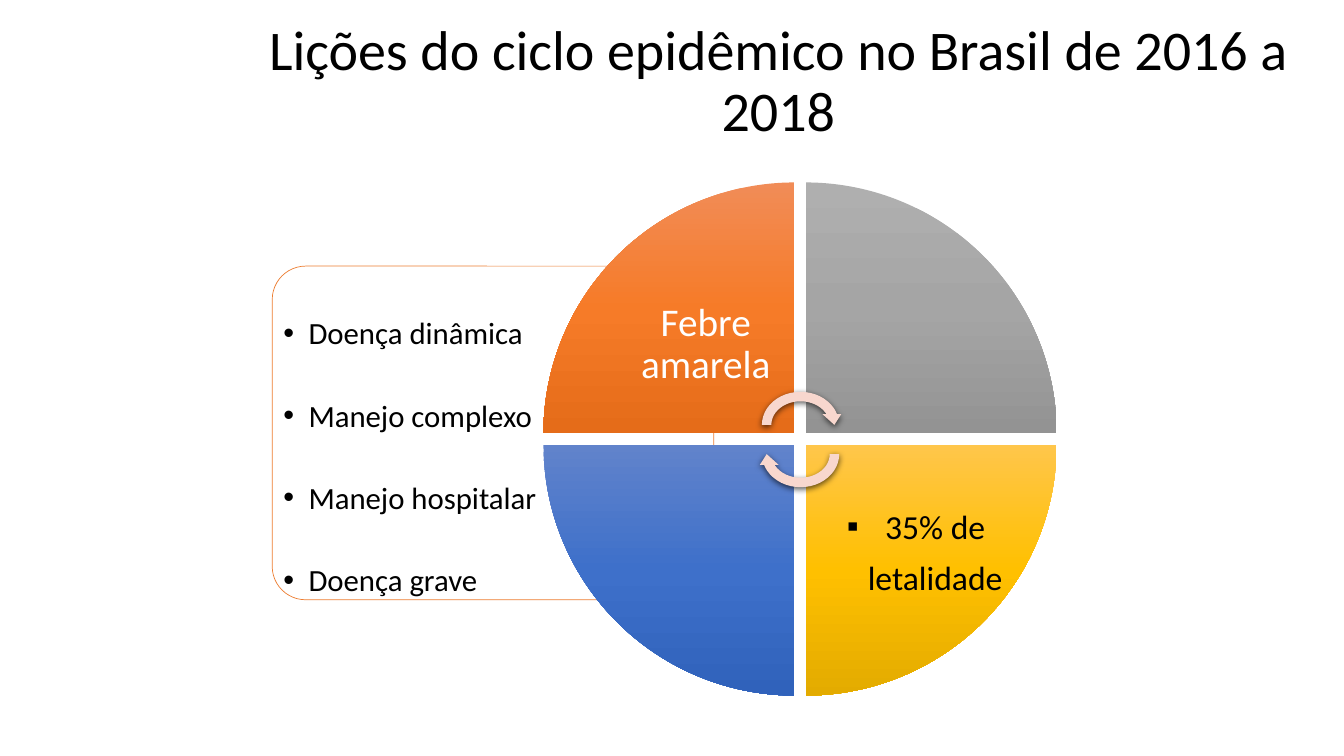
import pptx
import pptx.util
import pptx.dml.color
import pptx.enum.shapes
import pptx.enum.text
import pptx.oxml
from lxml import etree

Inches = pptx.util.Inches
Pt = pptx.util.Pt
SHAPE = pptx.enum.shapes.MSO_SHAPE
ALIGN = pptx.enum.text.PP_ALIGN
ANCHOR = pptx.enum.text.MSO_ANCHOR
A = "http://schemas.openxmlformats.org/drawingml/2006/main"
NS = f'xmlns:a="{A}"'


def color(value):
    return pptx.dml.color.RGBColor.from_string(value)


def write(shape, lines, size, ink="000000", align=ALIGN.CENTER, anchor=ANCHOR.MIDDLE,
          inset=None, spacing=0.9, after=0, bullet=None, hang=0):
    frame = shape.text_frame
    frame.word_wrap = True
    frame.auto_size = pptx.enum.text.MSO_AUTO_SIZE.NONE
    frame.vertical_anchor = anchor
    if inset is not None:
        frame.margin_left = frame.margin_right = Inches(inset)
        frame.margin_top = frame.margin_bottom = Inches(inset)
    frame.text = "\n".join(lines)
    for paragraph in frame.paragraphs:
        if bullet:
            properties = paragraph._p.get_or_add_pPr()
            properties.set("marL", str(Inches(hang)))
            properties.set("indent", str(-Inches(hang)))
            etree.SubElement(properties, f"{{{A}}}buFont", typeface="Arial")
            etree.SubElement(properties, f"{{{A}}}buChar", char=bullet)
        paragraph.alignment = align
        paragraph.line_spacing = spacing
        paragraph.space_before = Pt(0)
        paragraph.space_after = Pt(after)
        for run in paragraph.runs:
            run.font.name = "Calibri"
            run.font.size = Pt(size)
            run.font.color.rgb = color(ink)


deck = pptx.Presentation()
deck.slide_width = Inches(13.33)
deck.slide_height = Inches(7.5)
slide = deck.slides.add_slide(deck.slide_layouts[0])
shapes = slide.shapes

lessons_frame = shapes.add_shape(SHAPE.ROUNDED_RECTANGLE, Inches(2.7), Inches(2.64),
                                 Inches(4.38), Inches(3.31))
lessons_frame.adjustments[0] = 0.1
lessons_frame.shadow.inherit = False
lessons_frame.fill.solid()
lessons_frame.fill.fore_color.rgb = color("FFFFFF")
white = lessons_frame.fill._xPr.find(f".//{{{A}}}srgbClr")
etree.SubElement(white, f"{{{A}}}alpha", val="90000")
lessons_frame.line.color.rgb = color("ED7D31")
lessons_frame.line.width = Pt(0.5)

lessons = shapes.add_textbox(Inches(2.77), Inches(2.71), Inches(2.92), Inches(2.33))
write(lessons, ["Doença dinâmica", "Manejo complexo", "Manejo hospitalar", "Doença grave"], 22,
      align=ALIGN.LEFT, anchor=ANCHOR.TOP, inset=0.04, spacing=2, after=6, bullet="•", hang=0.25)

wedge_left, wedge_top, wedge_size = 5.39, 1.81, 2.49
wedge_step = 2.6
wedges = [
    (0, 0, ("F18C57", "F67B28", "E56C19")),
    (1, 0, ("AFAFAF", "A5A5A5", "939393")),
    (1, 1, ("FFC64B", "FFC000", "E3AB00")),
    (0, 1, ("6183CB", "3E70CA", "3062BB")),
]
for turn, (column, row, shades) in enumerate(wedges):
    wedge = shapes.add_shape(SHAPE.PIE_WEDGE, Inches(wedge_left + column * wedge_step),
                             Inches(wedge_top + row * wedge_step),
                             Inches(wedge_size), Inches(wedge_size))
    wedge.rotation = turn * 90
    wedge.shadow.inherit = False
    wedge.line.fill.background()
    stops = "".join(f'<a:gs pos="{place * 50000}"><a:srgbClr val="{shade}"/></a:gs>'
                    for place, shade in enumerate(shades))
    gradient = pptx.oxml.parse_xml(
        f'<a:gradFill {NS} rotWithShape="0"><a:gsLst>{stops}</a:gsLst>'
        '<a:lin ang="5400000" scaled="0"/></a:gradFill>')
    wedge._element.spPr.find(f"{{{A}}}prstGeom").addnext(gradient)

disease = shapes.add_textbox(Inches(6.12), Inches(2.54), Inches(1.76), Inches(1.76))
write(disease, ["Febre amarela"], 28, ink="FFFFFF", inset=0.22)

for arrow_top, arrow_turn in ((3.84, 0), (4.13, 180)):
    cycle_arrow = shapes.add_shape(SHAPE.CIRCULAR_ARROW, Inches(7.51), Inches(arrow_top),
                                   Inches(0.86), Inches(0.75))
    cycle_arrow.rotation = arrow_turn
    cycle_arrow.fill.solid()
    cycle_arrow.fill.fore_color.rgb = color("F8D7CE")
    cycle_arrow.line.fill.background()
    cycle_arrow._element.spPr.append(pptx.oxml.parse_xml(
        f'<a:effectLst {NS}><a:outerShdw blurRad="{Pt(4.5)}" dist="{Pt(1.5)}" dir="5400000" '
        'algn="ctr" rotWithShape="0"><a:srgbClr val="000000"><a:alpha val="63000"/>'
        '</a:srgbClr></a:outerShdw></a:effectLst>'))

title, lethality = slide.placeholders
title.left, title.top, title.width, title.height = map(Inches, (2.11, 0.05, 11.22, 1.42))
write(title, ["Lições do ciclo epidêmico no Brasil de 2016 a 2018"], 40, anchor=ANCHOR.BOTTOM)
lethality.left, lethality.top, lethality.width, lethality.height = map(
    Inches, (7.87, 4.65, 2.43, 1.54))
write(lethality, ["35% de letalidade"], 24, spacing=1.25, after=6, bullet="▪", hang=0.38)
for placeholder in (title, lethality):
    shapes._spTree.append(placeholder._element)

deck.save("out.pptx")
